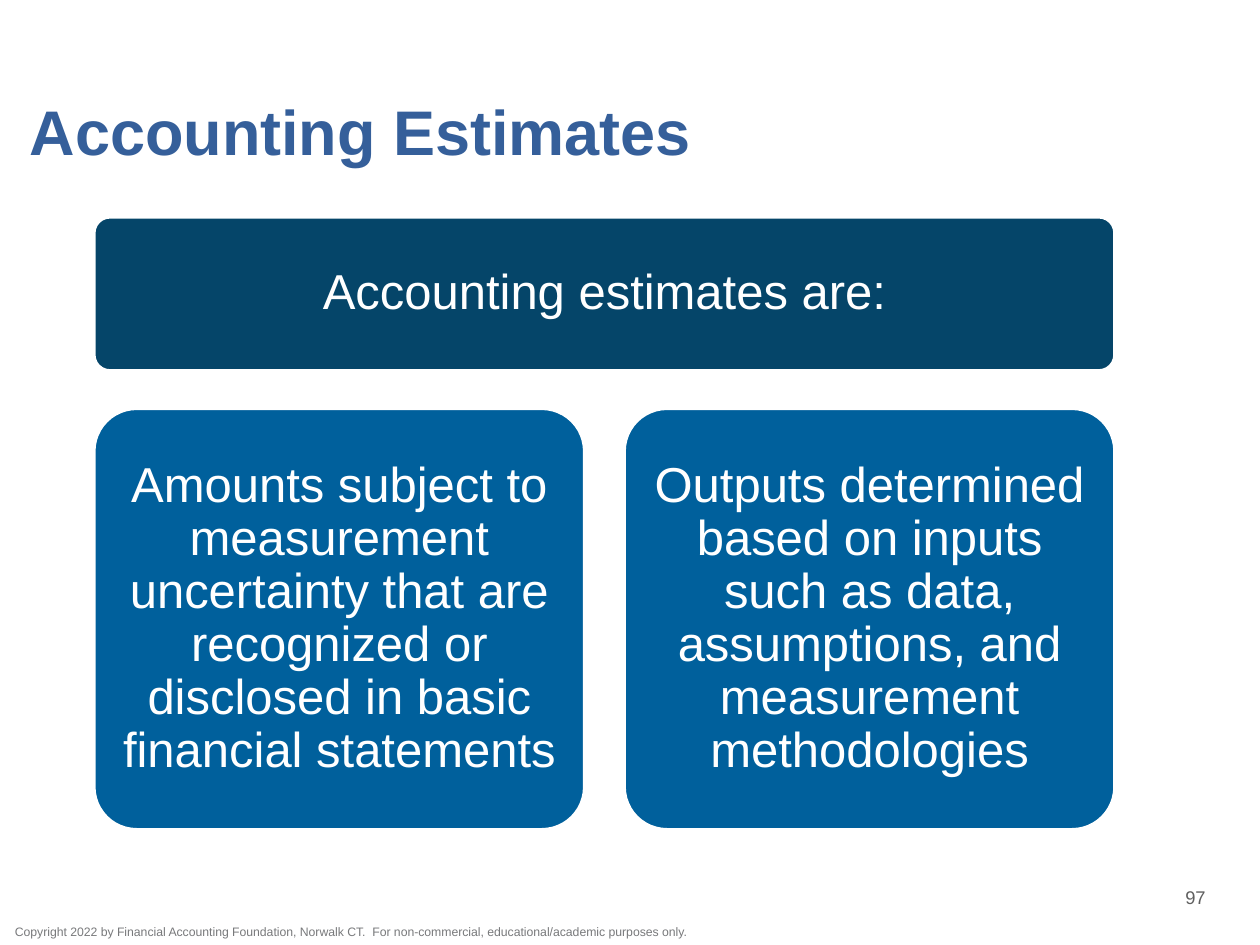
from dataclasses import dataclass

from pptx import Presentation
from pptx import util as u
from pptx.dml.color import RGBColor
from pptx.enum import shapes, text


@dataclass(frozen=True)
class Theme:
    font: str = "Arial"
    title: str = "355F9A"
    banner: str = "054569"
    card: str = "00609C"
    white: str = "FFFFFF"
    number: str = "5F5F5F"
    footer: str = "78797B"
    title_size: float = 36
    body_size: float = 28
    number_size: float = 10.5
    footer_size: float = 7


@dataclass(frozen=True)
class Box:
    """Position and size in centimetres."""
    left: float
    top: float
    width: float
    height: float

    def lengths(self) -> list:
        return [u.Cm(v) for v in (self.left, self.top, self.width, self.height)]


@dataclass(frozen=True)
class Panel:
    words: str
    box: Box
    fill: str


THEME = Theme()
CENTER = text.PP_ALIGN.CENTER
MIDDLE = text.MSO_ANCHOR.MIDDLE
PANEL_INSET = 0.29


def rgb(value: str) -> RGBColor:
    return RGBColor.from_string(value)


def set_text(sp, words: str, size: float, color: str, bold: bool = False):
    """Fill a shape with one formatted paragraph and return that paragraph."""
    tf = sp.text_frame
    tf.text = words
    tf.word_wrap = True
    p = tf.paragraphs[0]
    for r in p.runs:
        r.font.name = THEME.font
        r.font.size = u.Pt(size)
        r.font.bold = bold
        r.font.color.rgb = rgb(color)
    return p


def set_insets(sp, left: float, top: float, right: float, bottom: float) -> None:
    tf = sp.text_frame
    tf.margin_left, tf.margin_top = u.Cm(left), u.Cm(top)
    tf.margin_right, tf.margin_bottom = u.Cm(right), u.Cm(bottom)


def add_panel(s, panel: Panel) -> None:
    sp = s.shapes.add_shape(shapes.MSO_SHAPE.ROUNDED_RECTANGLE, *panel.box.lengths())
    sp.adjustments[0] = 0.1
    sp.shadow.inherit = False
    sp.fill.solid()
    sp.fill.fore_color.rgb = rgb(panel.fill)
    sp.line.color.rgb = rgb(THEME.white)
    sp.line.width = u.Pt(1)
    p = set_text(sp, panel.words, THEME.body_size, THEME.white)
    p.alignment = CENTER
    p.line_spacing = 0.9
    sp.text_frame.vertical_anchor = MIDDLE
    set_insets(sp, *[PANEL_INSET] * 4)


def main() -> None:
    prs = Presentation()
    prs.slide_width, prs.slide_height = u.Cm(25.4), u.Cm(19.05)
    s = prs.slides.add_slide(prs.slide_layouts[6])

    # Title
    title = s.shapes.add_textbox(*Box(0.35, 1.5, 24.1, 2.49).lengths())
    p = set_text(title, "Accounting Estimates", THEME.title_size, THEME.title, bold=True)
    p.line_spacing = u.Pt(37)
    title.text_frame.vertical_anchor = MIDDLE
    set_insets(title, 0.25, 0, 0, 0)

    # Banner above two equal cards
    left, width, gap = 1.91, 20.55, 0.83
    card_width = (width - gap) / 2
    add_panel(s, Panel("Accounting estimates are:",
                       Box(left, 4.39, width, 3.07), THEME.banner))
    cards = (
        "Amounts subject to measurement uncertainty that are recognized or "
        "disclosed in basic financial statements",
        "Outputs determined based on inputs such as data, assumptions, and "
        "measurement methodologies",
    )
    for i, words in enumerate(cards):
        box = Box(left + i * (card_width + gap), 8.25, card_width, 8.46)
        add_panel(s, Panel(words, box, THEME.card))

    # Slide number
    number = s.shapes.add_textbox(*Box(22.79, 17.66, 2.62, 0.84).lengths())
    set_text(number, "97", THEME.number_size, THEME.number).alignment = CENTER
    number.text_frame.vertical_anchor = MIDDLE

    # Copyright line
    footer = s.shapes.add_textbox(*Box(0.3, 18.64, 13.79, 0.36).lengths())
    set_text(footer, "Copyright 2022 by Financial Accounting Foundation, Norwalk CT.  "
             "For non-commercial, educational/academic purposes only.",
             THEME.footer_size, THEME.footer)
    footer.text_frame.word_wrap = False
    set_insets(footer, 0, 0, 0, 0)

    prs.save("out.pptx")


if __name__ == "__main__":
    main()
